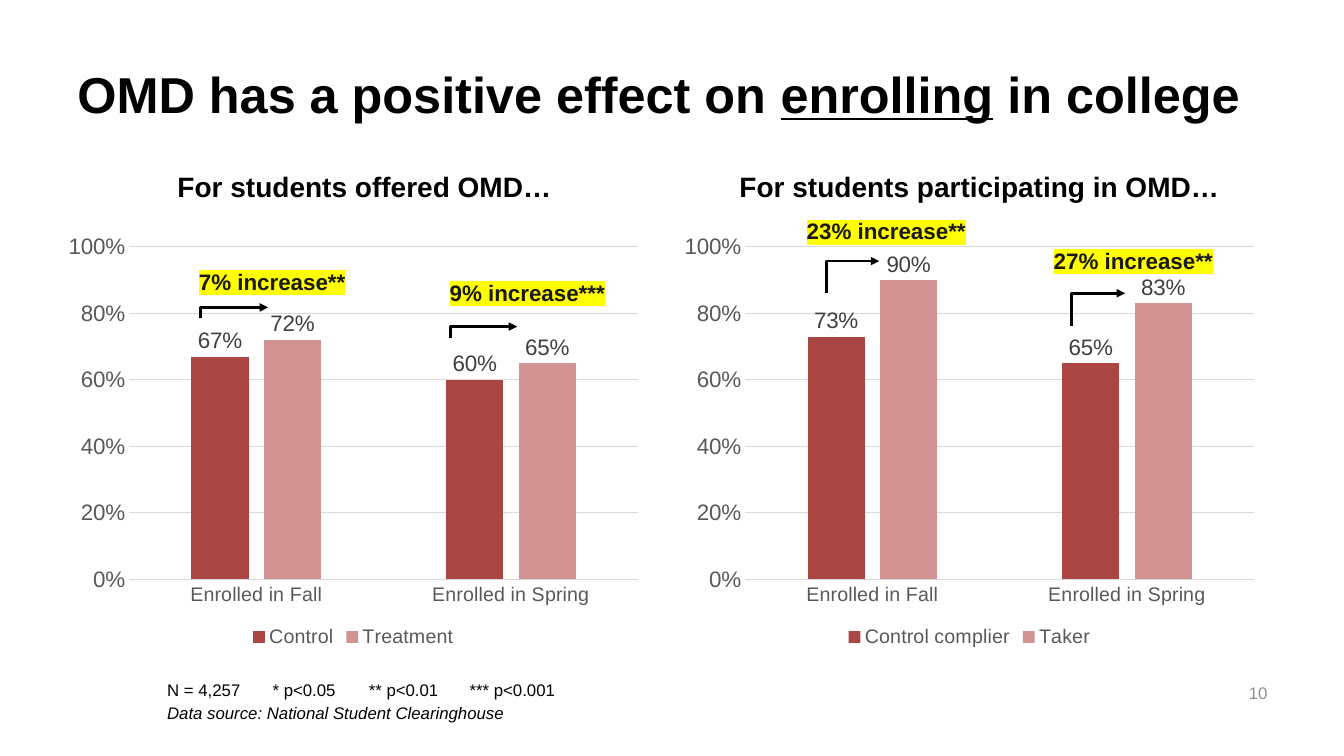
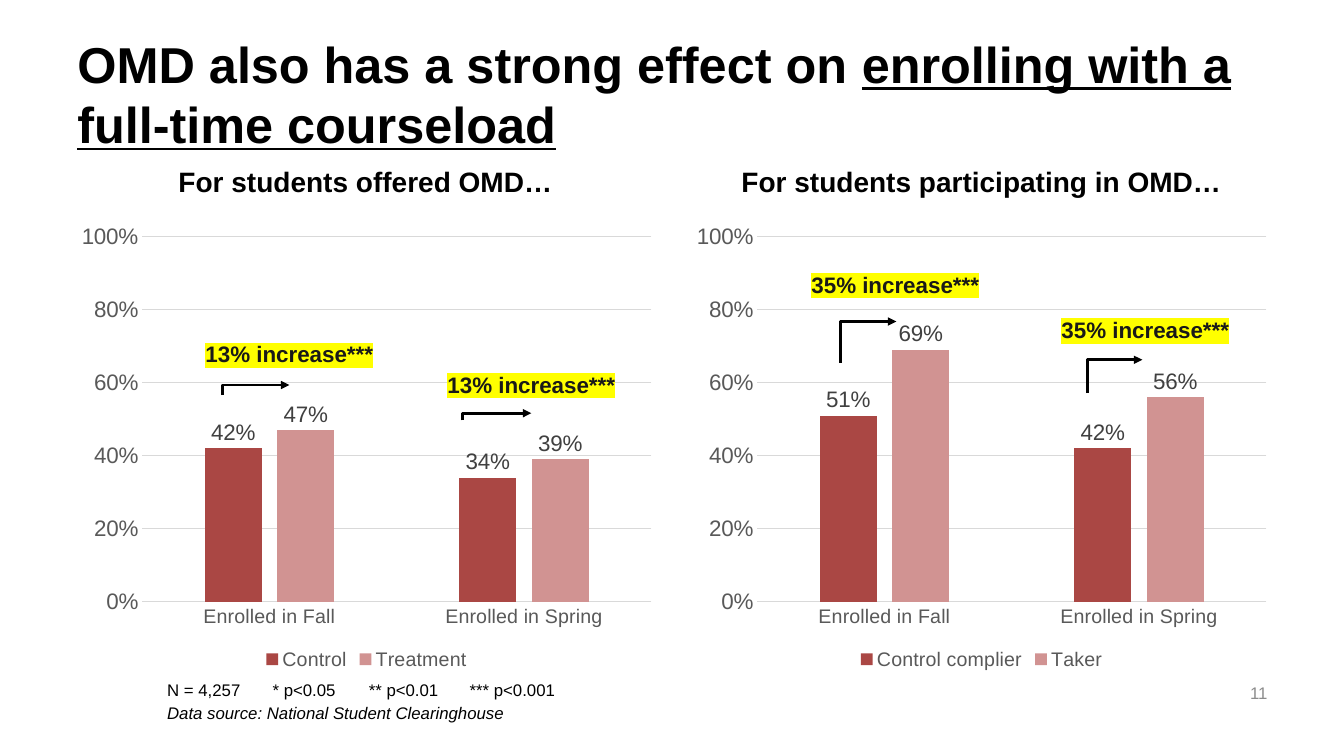
from pptx import Presentation
from pptx.chart.data import CategoryChartData
from pptx.dml.color import RGBColor
from pptx.enum.chart import (XL_CHART_TYPE, XL_LABEL_POSITION,
                             XL_LEGEND_POSITION, XL_TICK_MARK)
from pptx.enum.shapes import MSO_CONNECTOR
from pptx.enum.text import MSO_ANCHOR, PP_ALIGN
from pptx.oxml import parse_xml
from pptx.oxml.ns import nsdecls, qn
from pptx.util import Inches, Pt

COLUMNS = XL_CHART_TYPE.COLUMN_CLUSTERED
OUTSIDE_END = XL_LABEL_POSITION.OUTSIDE_END
LEGEND_BOTTOM = XL_LEGEND_POSITION.BOTTOM
NO_TICK = XL_TICK_MARK.NONE
ELBOW = MSO_CONNECTOR.ELBOW
TOP, MIDDLE = MSO_ANCHOR.TOP, MSO_ANCHOR.MIDDLE
LEFT, CENTER, RIGHT = PP_ALIGN.LEFT, PP_ALIGN.CENTER, PP_ALIGN.RIGHT

BLACK, GRID, AXIS_TEXT, VALUE_TEXT = "000000", "D9D9D9", "595959", "404040"
SERIES_COLORS = ("AA4744", "D19392")
HIGHLIGHT = "FFFF00"
TERMS = ("Enrolled in Fall", "Enrolled in Spring")
PANEL_WIDTH = 5.89
HEADINGS = ("For students offered OMD…", "For students participating in OMD…")
SERIES_NAMES = (("Control", "Treatment"), ("Control complier", "Taker"))
FOOTNOTE = ("N = 4,257\t * p<0.05\t** p<0.01\t*** p<0.001",
            "Data source: National Student Clearinghouse")

# Text styles: font attributes plus a colour
STYLES = {
    "title": ({"size": Pt(36), "bold": True}, BLACK),
    "heading": ({"size": Pt(20), "bold": True}, BLACK),
    "callout": ({"size": Pt(16), "bold": True}, "191918"),
    "footnote": ({"size": Pt(12)}, BLACK),
    "number": ({"size": Pt(12)}, "8C8C8C"),
    "chart": ({"size": Pt(10)}, BLACK),
    "category": ({"size": Pt(14)}, AXIS_TEXT),
    "scale": ({"size": Pt(16)}, AXIS_TEXT),
    "value": ({"size": Pt(16)}, VALUE_TEXT),
}


def rgb(hex_color):
    return RGBColor.from_string(hex_color)


def apply_style(font, style, **extra):
    values, color = STYLES[style]
    for name, value in {"name": "Arial", **values, **extra}.items():
        setattr(font, name, value)
    font.color.rgb = rgb(color)


class Deck:
    def __init__(self):
        self.presentation = Presentation()
        self.presentation.slide_width = Inches(13.33)
        self.presentation.slide_height = Inches(7.5)
        self.slide = None

    def new_slide(self, title_runs, number):
        layout = self.presentation.slide_layouts[6]
        self.slide = self.presentation.slides.add_slide(layout)
        self.text((0.67, 0.3, 12, 1.25), [title_runs], "title", anchor=MIDDLE)
        self.text((12.02, 6.67, 0.65, 0.4), [[(str(number), {})]], "number",
                  RIGHT, MIDDLE)
        note, source = FOOTNOTE
        self.text((1.56, 6.69, 10.24, 0.55),
                  [[(note, {})], [(source, {"italic": True})]], "footnote")

    def text(self, box, paragraphs, style, align=LEFT, anchor=TOP):
        """Each paragraph is a list of (text, extra font values) runs."""
        frame = self.slide.shapes.add_textbox(*map(Inches, box)).text_frame
        frame.word_wrap = True
        frame.vertical_anchor = anchor
        for index, runs in enumerate(paragraphs):
            paragraph = frame.paragraphs[0]
            if index:
                paragraph = frame.add_paragraph()
                paragraph.space_before = Pt(2.4)
            paragraph.alignment = align
            for words, extra in runs:
                run = paragraph.add_run()
                run.text = words
                apply_style(run.font, style, **extra)
        return frame

    def heading(self, left, top, words):
        self.text((left, top, PANEL_WIDTH, 0.7), [[(words, {})]], "heading",
                  CENTER, MIDDLE)

    def callout(self, center, top, words):
        frame = self.text((center - 1, top, 2, 0.37), [[(words, {})]],
                          "callout", CENTER)
        fill = frame.paragraphs[0].runs[0].font._element.find(qn("a:solidFill"))
        fill.addnext(parse_xml(
            f'<a:highlight {nsdecls("a")}><a:srgbClr val="{HIGHLIGHT}"/>'
            '</a:highlight>'))

    def step_arrow(self, *ends):
        """An elbow that rises at its start, then runs right."""
        arrow = self.slide.shapes.add_connector(ELBOW, *map(Inches, ends))
        arrow.line.width = Pt(2)
        arrow.line.color.rgb = rgb(BLACK)
        properties = arrow._element.spPr
        properties.find(".//" + qn("a:avLst")).append(parse_xml(
            f'<a:gd {nsdecls("a")} name="adj1" fmla="val 0"/>'))
        properties.find(qn("a:ln")).append(parse_xml(
            f'<a:tailEnd {nsdecls("a")} type="triangle"/>'))
        properties.append(parse_xml(f'<a:effectLst {nsdecls("a")}/>'))

    def column_chart(self, left, top, height, names, values):
        data = CategoryChartData(number_format="0%")
        data.categories = TERMS
        for name, shares in zip(names, values):
            data.add_series(name, shares)
        chart = self.slide.shapes.add_chart(
            COLUMNS, *map(Inches, (left, top, PANEL_WIDTH, height)), data).chart
        apply_style(chart.font, "chart")
        chart.has_title = False
        chart.has_legend = True
        chart.legend.position = LEGEND_BOTTOM
        chart.legend.include_in_layout = False
        apply_style(chart.legend.font, "category")

        # Columns and their values
        plot = chart.plots[0]
        for name, value in {"gap_width": 219, "overlap": -27,
                            "vary_by_categories": False}.items():
            setattr(plot, name, value)
        for series, color in zip(plot.series, SERIES_COLORS):
            series.format.fill.solid()
            series.format.fill.fore_color.rgb = rgb(color)
            labels = series.data_labels
            for name, value in {"show_value": True, "number_format": "0%",
                                "number_format_is_linked": False,
                                "position": OUTSIDE_END}.items():
                setattr(labels, name, value)
            apply_style(labels.font, "value")

        # Axes
        terms, scale = chart.category_axis, chart.value_axis
        for axis, style in ((terms, "category"), (scale, "scale")):
            axis.major_tick_mark = axis.minor_tick_mark = NO_TICK
            apply_style(axis.tick_labels.font, style)
        for name, value in {"minimum_scale": 0, "maximum_scale": 1,
                            "major_unit": 0.2,
                            "has_major_gridlines": True}.items():
            setattr(scale, name, value)
        scale.tick_labels.number_format = "0%"
        scale.tick_labels.number_format_is_linked = False
        scale.format.line.fill.background()
        for line in (terms.format.line, scale.major_gridlines.format.line):
            line.color.rgb = rgb(GRID)
            line.width = Pt(0.75)
        self.fix_plot_area(chart, height)

    def fix_plot_area(self, chart, height):
        """Keep the same margins around the plot at any chart height."""
        area = chart.element.find(".//" + qn("c:plotArea"))
        for old in area.findall(qn("c:layout")):
            area.remove(old)
        parts = {"x": 0.72 / PANEL_WIDTH, "y": 0.2 / height,
                 "w": 5.05 / PANEL_WIDTH, "h": (height - 0.92) / height}
        modes = '<c:xMode val="edge"/><c:yMode val="edge"/>'
        sizes = "".join(f'<c:{key} val="{share:.4f}"/>'
                        for key, share in parts.items())
        area.insert(0, parse_xml(
            f'<c:layout {nsdecls("c")}><c:manualLayout>'
            f'<c:layoutTarget val="inner"/>{modes}{sizes}'
            '</c:manualLayout></c:layout>'))


UNDERLINED = {"underline": True}

# Callouts: centre, top, words, then the arrow's start and end points
SLIDES = [
    {"number": 10,
     "title": [("OMD has a positive effect on ", {}),
               ("enrolling", UNDERLINED), (" in college", {})],
     "headings": ((0.67, 6.77), 1.5),
     "charts": ((0.56, 6.67), 2.25, 4.22),
     "values": (((0.67, 0.6), (0.72, 0.65)), ((0.73, 0.65), (0.9, 0.83))),
     "callouts": [
         (2.7, 2.61, "7% increase**", (1.99, 3.16, 2.66, 3.05)),
         (5.23, 2.72, "9% increase***", (4.47, 3.35, 5.13, 3.24)),
         (8.79, 2.11, "23% increase**", (8.2, 2.91, 8.72, 2.59)),
         (11.24, 2.4, "27% increase**", (10.63, 3.23, 11.16, 2.91))]},
    {"number": 11,
     "title": [("OMD also has a strong effect on ", {}),
               ("enrolling with a full-time courseload", UNDERLINED)],
     "headings": ((0.68, 6.79), 1.45),
     "charts": ((0.69, 6.79), 2.15, 4.54),
     "values": (((0.42, 0.34), (0.47, 0.39)), ((0.51, 0.42), (0.69, 0.56))),
     "callouts": [
         (2.87, 3.33, "13% increase***", (2.21, 3.92, 2.87, 3.82)),
         (5.27, 3.63, "13% increase***", (4.59, 4.17, 5.27, 4.1)),
         (8.88, 2.64, "35% increase***", (8.34, 3.6, 8.89, 3.19)),
         (11.36, 3.09, "35% increase***", (10.79, 3.9, 11.33, 3.57))]},
]


def main():
    deck = Deck()
    for content in SLIDES:
        deck.new_slide(content["title"], content["number"])

        # Two panels: students offered the programme, and participants
        chart_lefts, chart_top, chart_height = content["charts"]
        for left, names, values in zip(chart_lefts, SERIES_NAMES,
                                       content["values"]):
            deck.column_chart(left, chart_top, chart_height, names, values)
        heading_lefts, heading_top = content["headings"]
        for left, words in zip(heading_lefts, HEADINGS):
            deck.heading(left, heading_top, words)

        # Increases from control to treatment
        for center, top, words, arrow_ends in content["callouts"]:
            deck.callout(center, top, words)
            deck.step_arrow(*arrow_ends)
    deck.presentation.save("out.pptx")


if __name__ == "__main__":
    main()
